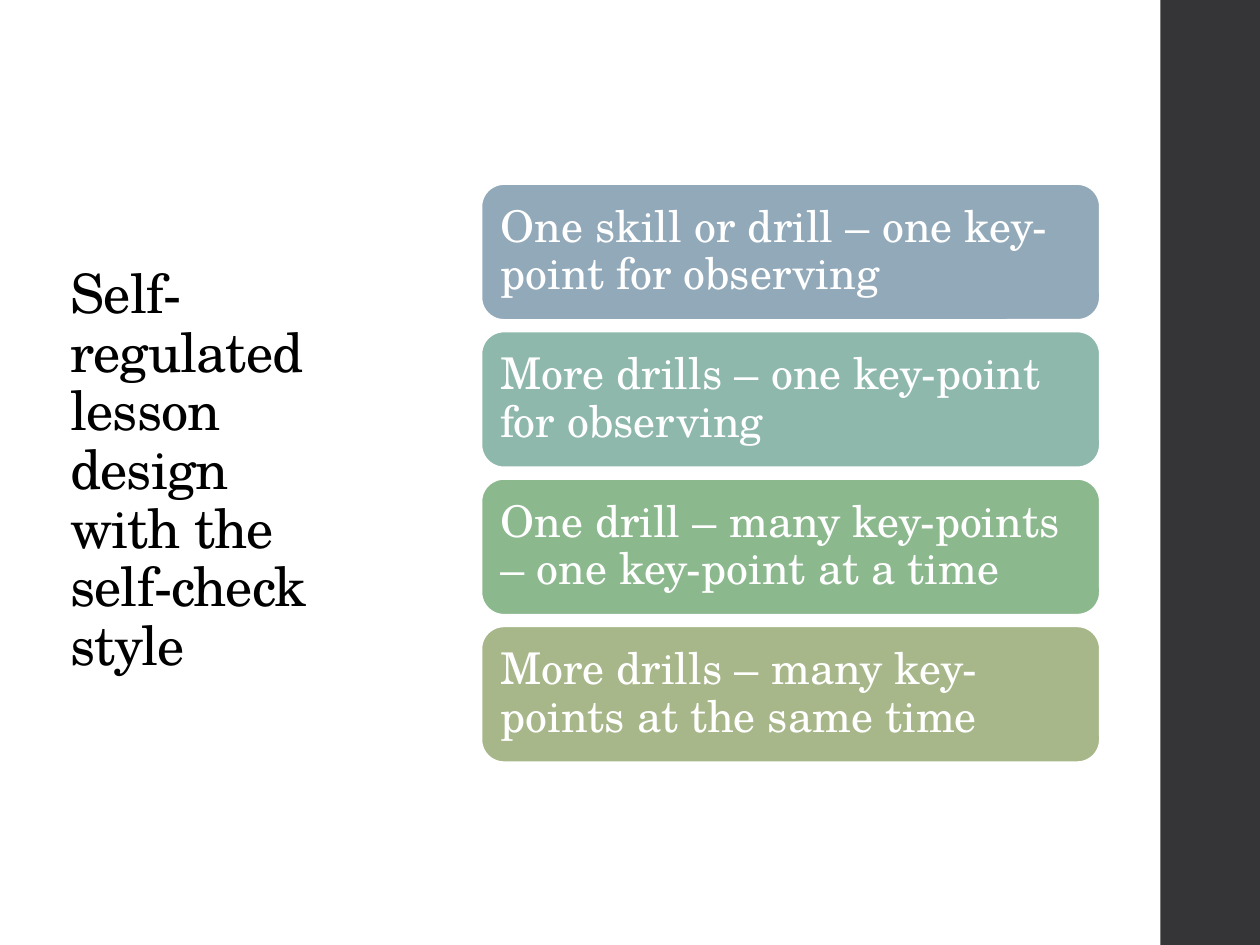
from dataclasses import dataclass

from pptx import Presentation
from pptx.dml.color import RGBColor
from pptx.enum.shapes import MSO_SHAPE
from pptx.enum.text import MSO_ANCHOR, MSO_AUTO_SIZE, PP_ALIGN
from pptx.util import Inches, Pt

WIDE, HIGH = 10, 7.5
FONT = "TeX Gyre Schola"
HUES = {
    "white": "FFFFFF", "black": "000000", "band": "353537",
    "blue": "92A9B9", "teal": "8FB8AD", "green": "8CB88E", "olive": "A7B789",
}
FRAME = {
    "word_wrap": True, "auto_size": MSO_AUTO_SIZE.NONE,
    "vertical_anchor": MSO_ANCHOR.MIDDLE,
    "margin_left": Inches(0.1), "margin_right": Inches(0.1),
    "margin_top": Inches(0.1), "margin_bottom": Inches(0.1),
}
PARA = {"alignment": PP_ALIGN.LEFT, "line_spacing": 0.9}


@dataclass
class Box:
    left: float
    top: float
    width: float
    height: float

    def lengths(self) -> list:
        return [Inches(v) for v in (self.left, self.top, self.width, self.height)]


@dataclass
class Card:
    text: str
    hue: str


CARDS = [
    Card("One skill or drill – one key-point for observing", "blue"),
    Card("More drills – one key-point for observing", "teal"),
    Card("One drill – many key-points – one key-point at a time", "green"),
    Card("More drills – many key-points at the same time", "olive"),
]
TITLE = "Self-regulated lesson design with the self-check style"
TITLE_BOX = Box(0.46, 0.91, 2.23, 5.67)
BAND_BOX = Box(9.21, 0, 0.8, HIGH)
FIRST = Box(3.82, 1.46, 4.91, 1.08)
STEP = 1.17


def color(hue: str) -> RGBColor:
    return RGBColor.from_string(HUES[hue])


def apply(target, values: dict) -> None:
    for name, value in values.items():
        setattr(target, name, value)


def write(shape, text: str, size: float, hue: str):
    """Fill a shape with one left-aligned paragraph and return its run."""
    frame = shape.text_frame
    apply(frame, FRAME)
    para = frame.paragraphs[0]
    apply(para, PARA)
    run = para.add_run()
    run.text = text
    apply(run.font, {"name": FONT, "size": Pt(size)})
    run.font.color.rgb = color(hue)
    return run


def block(slide, kind: MSO_SHAPE, box: Box, hue: str):
    """Add a plain filled shape with no line or shadow."""
    shape = slide.shapes.add_shape(kind, *box.lengths())
    shape.shadow.inherit = False
    shape.fill.solid()
    shape.fill.fore_color.rgb = color(hue)
    shape.line.fill.background()
    return shape


def draw_card(slide, card: Card, row: int) -> None:
    box = Box(FIRST.left, FIRST.top + row * STEP, FIRST.width, FIRST.height)
    shape = block(slide, MSO_SHAPE.ROUNDED_RECTANGLE, box, card.hue)
    shape.line.color.rgb = color("white")
    shape.line.width = Pt(1.1)
    write(shape, card.text, 25, "white")


def draw_title(slide) -> None:
    title = slide.shapes.title
    apply(title, dict(zip(("left", "top", "width", "height"), TITLE_BOX.lengths())))
    run = write(title, TITLE, 31, "black")
    run.font._element.set("spc", "-50")


def main() -> None:
    deck = Presentation()
    apply(deck, {"slide_width": Inches(WIDE), "slide_height": Inches(HIGH)})
    slide = deck.slides.add_slide(deck.slide_layouts.get_by_name("Title Only"))
    block(slide, MSO_SHAPE.RECTANGLE, BAND_BOX, "band")
    draw_title(slide)
    for row, card in enumerate(CARDS):
        draw_card(slide, card, row)
    deck.save("out.pptx")


if __name__ == "__main__":
    main()
